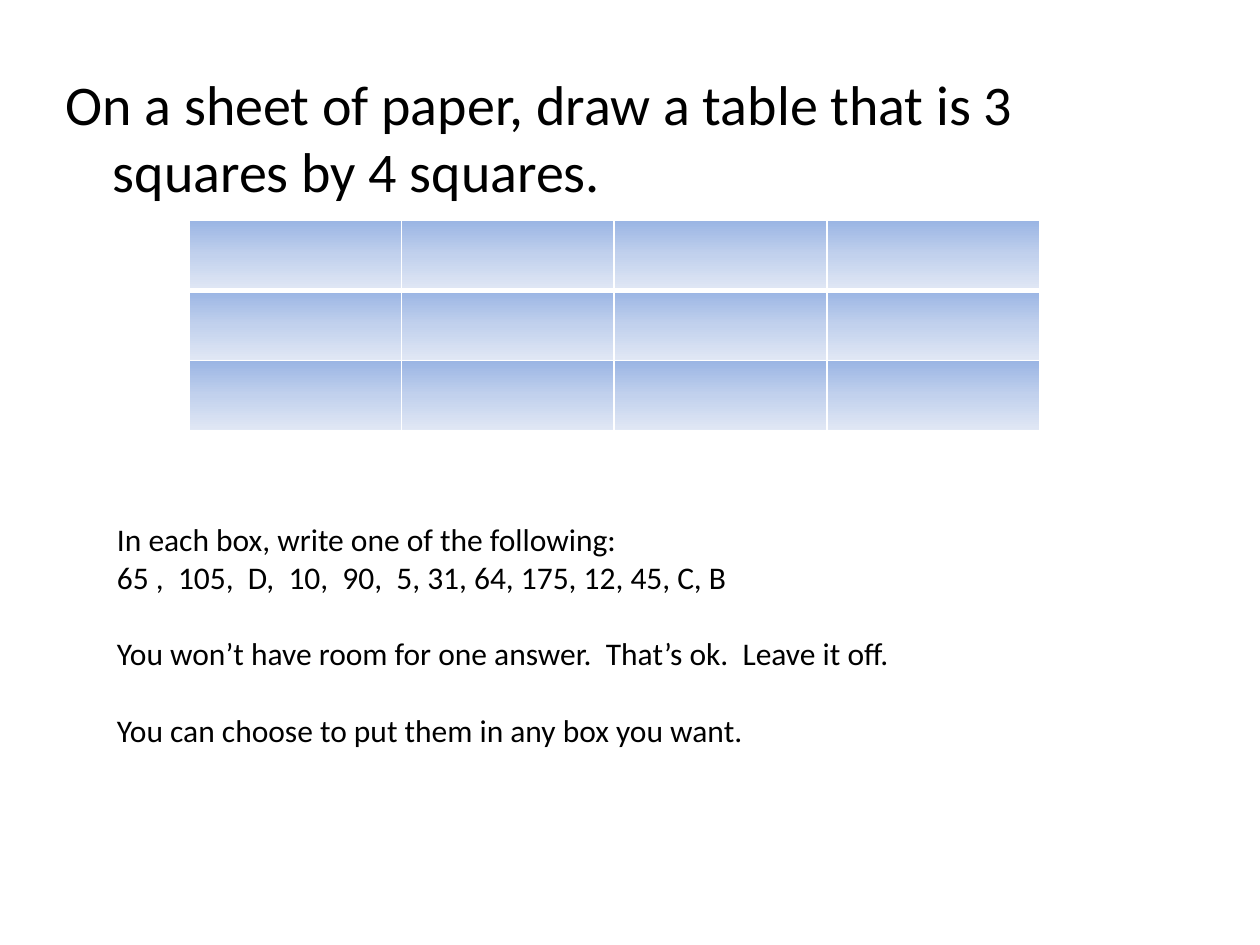
import pptx
import pptx.dml.color
import pptx.oxml
import pptx.oxml.ns
import pptx.util
from lxml import etree

Inches = pptx.util.Inches
Pt = pptx.util.Pt
BLACK = pptx.dml.color.RGBColor(0x00, 0x00, 0x00)
WHITE = pptx.dml.color.RGBColor(0xFF, 0xFF, 0xFF)
GRADIENT = (
    (0, pptx.dml.color.RGBColor(0x9A, 0xB5, 0xE4)),
    (50, pptx.dml.color.RGBColor(0xC2, 0xD1, 0xED)),
    (100, pptx.dml.color.RGBColor(0xE1, 0xE8, 0xF5)),
)
ROWS, COLUMNS = 3, 4
STEPS = (
    ("In each box, write one of the following:", 0),
    ("65 ,  105,  D,  10,  90,  5, 31, 64, 175, 12, 45, C, B", 0),
    ("You won’t have room for one answer.  That’s ok.  Leave it off.", 22),
    ("You can choose to put them in any box you want.", 22),
)


def add_element(parent, tag, **attributes):
    """Append a DrawingML element with the given attributes."""
    values = {name: str(value) for name, value in attributes.items()}
    return etree.SubElement(parent, pptx.oxml.ns.qn(tag), values)


class Worksheet:
    """Hold the worksheet style and the current slide."""

    def __init__(self, deck, font="Calibri"):
        self.font = font
        self.slide = deck.slides.add_slide(deck.slide_layouts[1])
        title = self.slide.shapes.title
        title.element.getparent().remove(title.element)

    def style(self, paragraph, size):
        """Apply the worksheet font to a paragraph."""
        paragraph.font.name = self.font
        paragraph.font.size = Pt(size)
        paragraph.font.color.rgb = BLACK

    def instruction(self, wording, left, top, width, height):
        """Fill the body placeholder with an unbulleted instruction."""
        body = self.slide.placeholders[1]
        body.left, body.top = Inches(left), Inches(top)
        body.width, body.height = Inches(width), Inches(height)
        body.text_frame.text = wording
        paragraph = body.text_frame.paragraphs[0]
        add_element(paragraph._p.get_or_add_pPr(), "a:buNone")
        self.style(paragraph, 32)

    def paint_cell(self, cell, bottom_width):
        """Give a cell white borders and a vertical gradient."""
        properties = cell._tc.get_or_add_tcPr()
        for side in "LRTB":
            width = Pt(bottom_width if side == "B" else 1)
            border = add_element(properties, f"a:ln{side}", w=width)
            solid = add_element(border, "a:solidFill")
            add_element(solid, "a:srgbClr", val=WHITE)
        gradient = add_element(properties, "a:gradFill", rotWithShape=1)
        stops = add_element(gradient, "a:gsLst")
        for percent, color in GRADIENT:
            stop = add_element(stops, "a:gs", pos=percent * 1000)
            add_element(stop, "a:srgbClr", val=color)
        add_element(gradient, "a:lin", ang=90 * 60000, scaled=0)

    def grid(self, left, top, width, height):
        """Add the empty answer grid."""
        table = self.slide.shapes.add_table(
            ROWS, COLUMNS, Inches(left), Inches(top), Inches(width), Inches(height)
        ).table
        for index, row in enumerate(table.rows):
            for cell in row.cells:
                self.paint_cell(cell, 3 if index == 0 else 1)

    def steps(self, lines, left, top, width, height):
        """Add a text box with one paragraph per step."""
        frame = self.slide.shapes.add_textbox(
            Inches(left), Inches(top), Inches(width), Inches(height)
        ).text_frame
        frame.word_wrap = True
        frame.text = "\n".join(wording for wording, _ in lines)
        for paragraph, (_, gap) in zip(frame.paragraphs, lines):
            paragraph.space_before = Pt(gap)
            self.style(paragraph, 18)


def main():
    """Build and save the worksheet slide."""
    deck = pptx.Presentation()
    deck.slide_width, deck.slide_height = Inches(10), Inches(7.5)
    worksheet = Worksheet(deck)
    worksheet.instruction(
        "On a sheet of paper, draw a table that is 3 squares by 4 squares.",
        0.42, 0.5, 8.58, 3.33,
    )
    worksheet.grid(1.5, 1.75, 6.75, 1.67)
    worksheet.steps(STEPS, 0.83, 4.08, 7.58, 2.52)
    deck.save("out.pptx")


if __name__ == "__main__":
    main()
